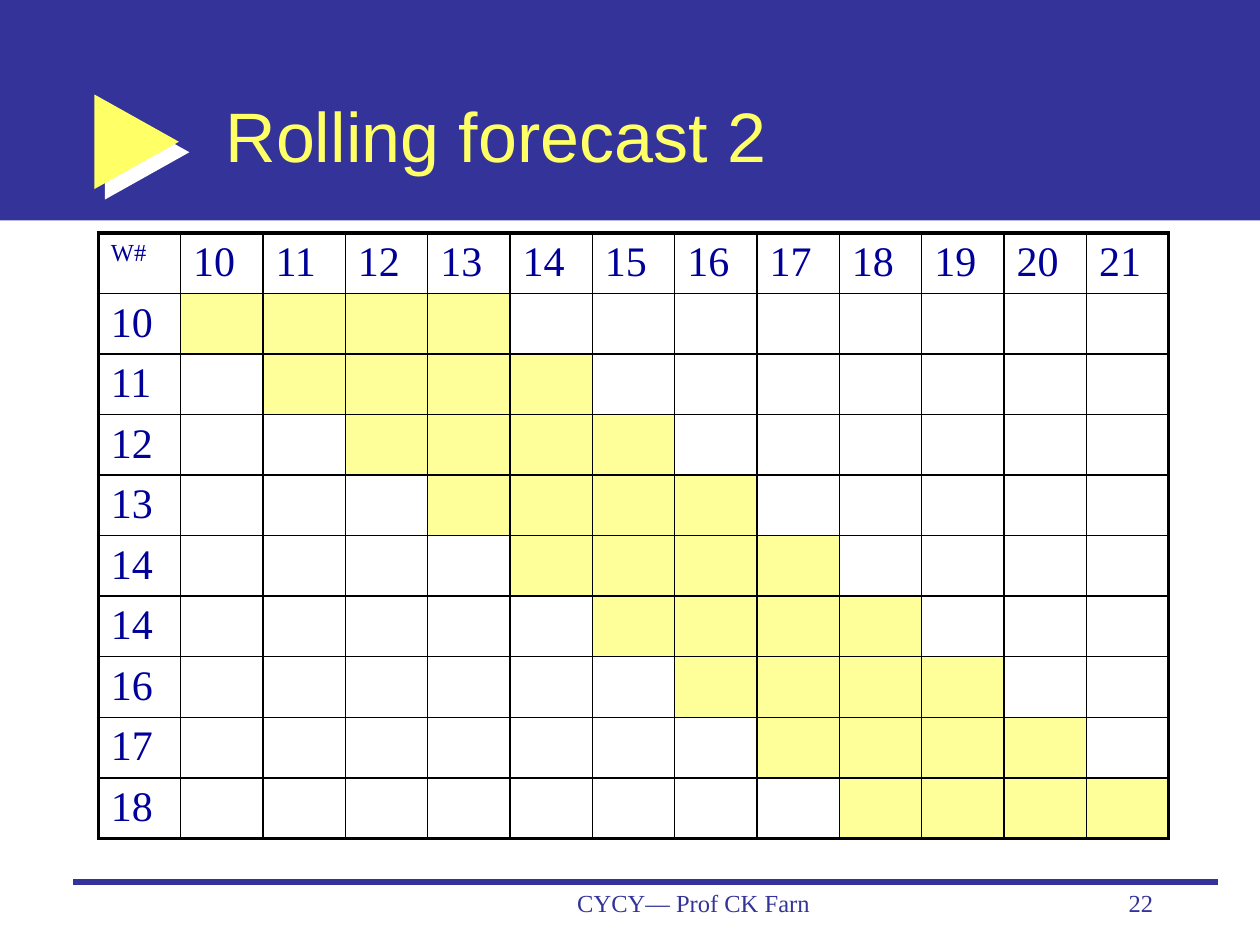
from lxml import etree
from pptx import Presentation
from pptx.dml.color import RGBColor
from pptx.enum.shapes import MSO_CONNECTOR, MSO_SHAPE
from pptx.enum.text import MSO_ANCHOR, MSO_AUTO_SIZE, PP_ALIGN
from pptx.oxml.ns import qn
from pptx.util import Inches, Pt

RECTANGLE, RIGHT_ARROW = MSO_SHAPE.RECTANGLE, MSO_SHAPE.RIGHT_ARROW
STRAIGHT = MSO_CONNECTOR.STRAIGHT
MIDDLE, TOP = MSO_ANCHOR.MIDDLE, MSO_ANCHOR.TOP
LEFT, CENTER, RIGHT = PP_ALIGN.LEFT, PP_ALIGN.CENTER, PP_ALIGN.RIGHT
NO_AUTOFIT = MSO_AUTO_SIZE.NONE

COLORS = {
    "band": "333399",
    "accent": "FFFF66",
    "forecast": "FFFF99",
    "label": "000099",
    "white": "FFFFFF",
    "border": "000000",
}
SERIF, SANS = "Times New Roman", "Arial"

WEEKS = list(range(10, 22))
ROW_LABELS = [10, 11, 12, 13, 14, 14, 16, 17, 18]
HORIZON = 4  # weeks covered by each forecast
THIN, THICK = 1, 2.25


def rgb(name):
    return RGBColor.from_string(COLORS[name])


def write(frame, text, size, font, color, align=LEFT):
    para = frame.paragraphs[0]
    para.alignment = align
    span = para.add_run()
    span.text = text
    span.font.size = Pt(size)
    span.font.name = font
    span.font.color.rgb = rgb(color)


def add_filled_shape(slide, kind, left, top, width, height, color):
    shape = slide.shapes.add_shape(
        kind, Inches(left), Inches(top), Inches(width), Inches(height))
    shape.shadow.inherit = False
    shape.fill.solid()
    shape.fill.fore_color.rgb = rgb(color)
    shape.line.fill.background()
    return shape


def add_hard_shadow(shape, color, distance, degrees):
    effects = shape._element.spPr.find(qn("a:effectLst"))
    shadow = etree.SubElement(
        effects, qn("a:outerShdw"), blurRad="0", dist=str(Pt(distance)),
        dir=str(degrees * 60000), algn="ctr", rotWithShape="0")
    etree.SubElement(shadow, qn("a:srgbClr"), val=COLORS[color])


def add_rule(slide, left, right, y, color, width):
    rule = slide.shapes.add_connector(
        STRAIGHT, Inches(left), Inches(y), Inches(right), Inches(y))
    rule.line.color.rgb = rgb(color)
    rule.line.width = Pt(width)
    etree.SubElement(rule._element.spPr, qn("a:effectLst"))


def place_title(slide, text):
    title = slide.shapes.title
    title.left, title.top = Inches(1.69), Inches(0.44)
    title.width, title.height = Inches(7.58), Inches(1.25)
    frame = title.text_frame
    frame.auto_size = NO_AUTOFIT
    frame.vertical_anchor = MIDDLE
    write(frame, text, 40, SANS, "accent")
    # Bring the title in front of the band
    title._element.getparent().append(title._element)


def add_footer(slide, text, left, width, align):
    box = slide.shapes.add_textbox(
        Inches(left), Inches(7), Inches(width), Inches(0.5))
    box.text_frame.word_wrap = True
    write(box.text_frame, text, 14, SERIF, "band", align)


def set_borders(cell, widths):
    properties = cell._tc.get_or_add_tcPr()
    # Border elements come before the cell's fill
    for index, (side, width) in enumerate(widths.items()):
        line = etree.Element(qn(f"a:ln{side}"), w=str(Pt(width)))
        fill = etree.SubElement(line, qn("a:solidFill"))
        etree.SubElement(fill, qn("a:srgbClr"), val=COLORS["border"])
        properties.insert(index, line)


def cell_label(row, column):
    if row == 0:
        return "W#" if column == 0 else str(WEEKS[column - 1])
    return str(ROW_LABELS[row - 1]) if column == 0 else ""


def add_forecast_table(slide):
    row_count, column_count = len(ROW_LABELS) + 1, len(WEEKS) + 1
    width, row_height = 8.5, 0.47
    table = slide.shapes.add_table(
        row_count, column_count, Inches(0.78), Inches(1.85),
        Inches(width), Inches(row_height * row_count)).table
    for column in table.columns:
        column.width = Inches(width / column_count)
    for row in table.rows:
        row.height = Inches(row_height)

    for r in range(row_count):
        for c in range(column_count):
            cell = table.cell(r, c)
            cell.margin_top, cell.margin_bottom = Inches(0.05), Inches(0.03)
            cell.vertical_anchor = TOP
            # Each forecast starts one week after the one above
            in_forecast = r > 0 and r <= c < r + HORIZON
            cell.fill.solid()
            cell.fill.fore_color.rgb = rgb("forecast" if in_forecast else "white")
            label = cell_label(r, c)
            if label:
                size = 14 if r == c == 0 else 24
                write(cell.text_frame, label, size, SERIF, "label")
            set_borders(cell, {
                "L": THICK if c == 0 else THIN,
                "R": THICK if c == column_count - 1 else THIN,
                "T": THICK if r == 0 else THIN,
                "B": THICK if r == row_count - 1 else THIN,
            })


def main():
    deck = Presentation()
    deck.slide_width, deck.slide_height = Inches(10), Inches(7.5)
    slide = deck.slides.add_slide(deck.slide_layouts[5])

    # Header band with its pointer
    add_filled_shape(slide, RECTANGLE, 0, 0, 10, 1.75, "band")
    pointer = add_filled_shape(
        slide, RIGHT_ARROW, 0.75, 0.75, 0.67, 0.75, "accent")
    pointer.adjustments[0], pointer.adjustments[1] = 0.38, 1
    add_hard_shadow(pointer, "white", 8.5, 45)
    place_title(slide, "Rolling forecast 2")

    # Footer
    add_rule(slide, 0.58, 9.67, 7, "band", 3)
    add_footer(slide, "CYCY— Prof CK Farn", 3.92, 3.17, CENTER)
    add_footer(slide, "22", 7.17, 2.08, RIGHT)

    # Forecast weeks
    add_forecast_table(slide)
    deck.save("out.pptx")


if __name__ == "__main__":
    main()
